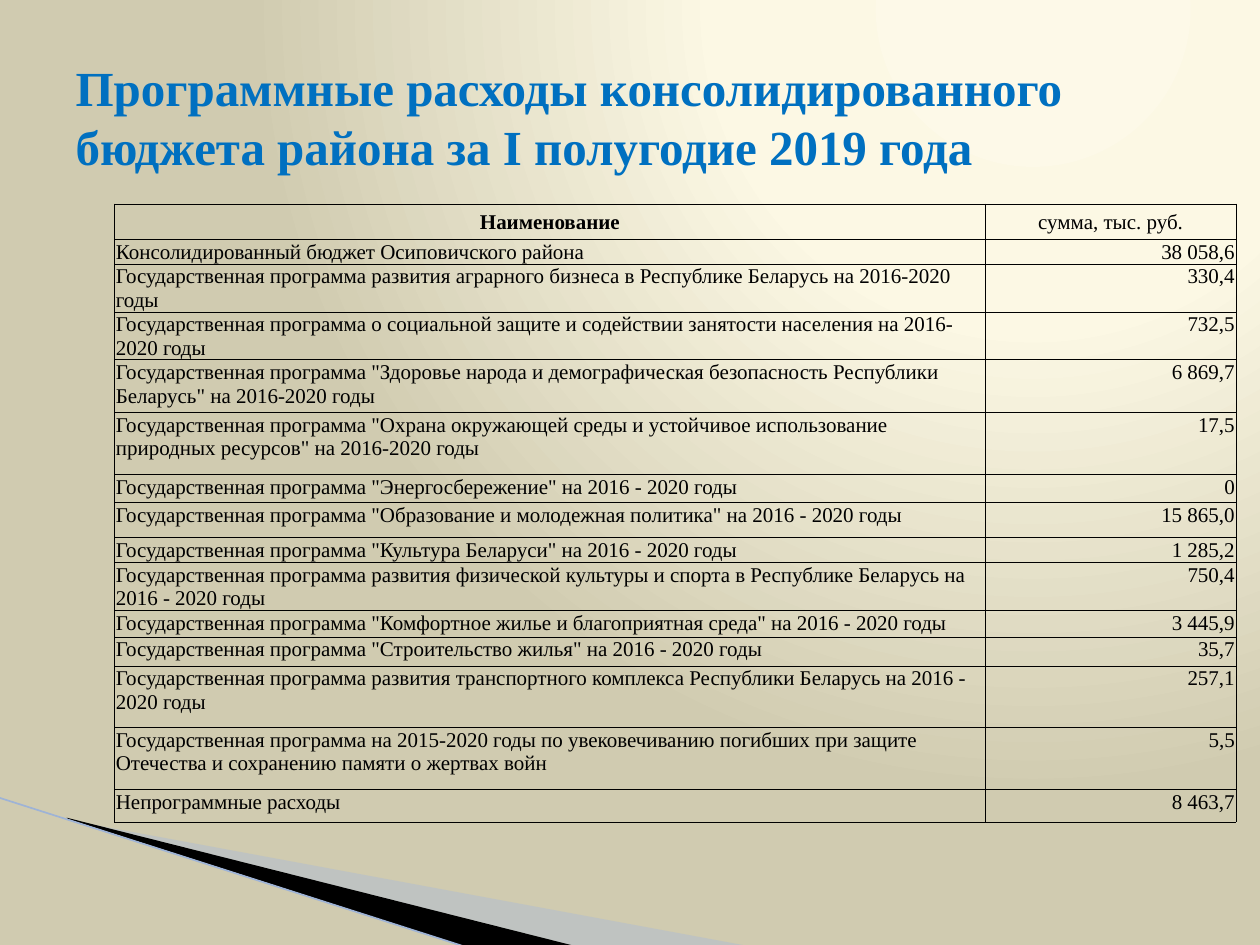
import lxml.etree
import pptx
import pptx.dml.color
import pptx.enum.shapes
import pptx.enum.text
import pptx.oxml.ns
import pptx.util

Inches = pptx.util.Inches
qn = pptx.oxml.ns.qn
ALIGN = pptx.enum.text.PP_ALIGN
ANCHOR = pptx.enum.text.MSO_ANCHOR

COLORS = {
    "glow": "FDF9E8", "cream": "FCF8E4", "sand": "D0CBB0", "mist": "A7B9DB",
    "black": "000000", "edge": "9EB3D6", "title": "0070C0",
}

TITLE = "Программные расходы консолидированного бюджета района за I полугодие 2019 года"
HEADER = ("Наименование", "сумма, тыс. руб.")
PROGRAM = "Государственная программа "
EXPENSES = [
    ("Консолидированный бюджет Осиповичского района", "38 058,6", 0.19),
    (PROGRAM + "развития аграрного бизнеса в Республике Беларусь на 2016-2020 годы", "330,4", 0.38),
    (PROGRAM + "о социальной защите и содействии занятости населения на 2016-2020 годы", "732,5", 0.36),
    (PROGRAM + '"Здоровье народа и демографическая безопасность Республики Беларусь" на 2016-2020 годы', "6 869,7", 0.42),
    (PROGRAM + '"Охрана окружающей среды и устойчивое использование природных ресурсов" на 2016-2020 годы', "17,5", 0.49),
    (PROGRAM + '"Энергосбережение" на 2016 - 2020 годы', "0", 0.22),
    (PROGRAM + '"Образование и молодежная политика" на 2016 - 2020 годы', "15 865,0", 0.28),
    (PROGRAM + '"Культура Беларуси" на 2016 - 2020 годы', "1 285,2", 0.2),
    (PROGRAM + "развития физической культуры и спорта в Республике Беларусь на 2016 - 2020 годы", "750,4", 0.38),
    (PROGRAM + '"Комфортное жилье и благоприятная среда" на 2016 - 2020 годы', "3 445,9", 0.21),
    (PROGRAM + '"Строительство жилья" на 2016 - 2020 годы', "35,7", 0.23),
    (PROGRAM + "развития транспортного комплекса Республики Беларусь на 2016 - 2020 годы", "257,1", 0.49),
    (PROGRAM + "на 2015-2020 годы по увековечиванию погибших при защите Отечества и сохранению памяти о жертвах войн", "5,5", 0.49),
    ("Непрограммные расходы", "8 463,7", 0.26),
]


class SlideBuilder:
    """Holds the style and the current slide, and adds each kind of element."""

    def __init__(self, slide, font_name):
        self.slide = slide
        self.font_name = font_name

    def color(self, name):
        return pptx.dml.color.RGBColor.from_string(COLORS[name])

    def child(self, parent, tag, **attributes):
        return lxml.etree.SubElement(parent, qn(tag), attributes)

    def background(self, stops, focus):
        self.slide.background.fill.gradient()
        gradient = next(self.slide.element.iter(qn("a:gradFill")))
        for part in list(gradient):
            gradient.remove(part)
        stop_list = self.child(gradient, "a:gsLst")
        for percent, name in stops:
            stop = self.child(stop_list, "a:gs", pos=str(percent * 1000))
            self.child(stop, "a:srgbClr", val=COLORS[name])
        circle = self.child(gradient, "a:path", path="circle")
        sides = {side: str(percent * 1000) for side, percent in zip("ltrb", focus)}
        self.child(circle, "a:fillToRect", **sides)

    def freeform(self, points, fill, opacity=100):
        corners = [(Inches(x), Inches(y)) for x, y in points]
        builder = self.slide.shapes.build_freeform(*corners[0])
        builder.add_line_segments(corners[1:], close=True)
        shape = builder.convert_to_shape()
        shape.shadow.inherit = False
        shape.fill.solid()
        shape.fill.fore_color.rgb = self.color(fill)
        shape.line.fill.background()
        if opacity < 100:
            tint = next(shape.element.spPr.iter(qn("a:srgbClr")))
            self.child(tint, "a:alpha", val=str(opacity * 1000))

    def line(self, start, end, color, width):
        ends = [Inches(value) for value in (*start, *end)]
        straight = pptx.enum.shapes.MSO_CONNECTOR.STRAIGHT
        connector = self.slide.shapes.add_connector(straight, *ends)
        connector.line.color.rgb = self.color(color)
        connector.line.width = pptx.util.Pt(width)
        self.child(connector._element.spPr, "a:effectLst")

    def set_text(self, frame, text, size, color, bold, align):
        frame.text = text
        para = frame.paragraphs[0]
        para.alignment = align
        for span in para.runs:
            span.font.name = self.font_name
            span.font.size = pptx.util.Pt(size)
            span.font.bold = bold
            span.font.color.rgb = self.color(color)

    def border(self, cell, color, width):
        properties = cell._tc.get_or_add_tcPr()
        for index, side in enumerate("LRTB"):
            edge = lxml.etree.Element(qn(f"a:ln{side}"), w=str(int(pptx.util.Pt(width))))
            fill = self.child(edge, "a:solidFill")
            self.child(fill, "a:srgbClr", val=COLORS[color])
            properties.insert(index, edge)

    def cell(self, cell, text, align, anchor, bold):
        cell.margin_left = cell.margin_right = cell.margin_top = Inches(0.01)
        cell.margin_bottom = 0
        cell.vertical_anchor = anchor
        cell.fill.background()
        self.border(cell, "black", 0.5)
        self.set_text(cell.text_frame, text, 12, "black", bold, align)

    def table(self, left, top, widths, header, header_height, rows):
        heights = [header_height] + [row[-1] for row in rows]
        frame = self.slide.shapes.add_table(
            len(heights), len(widths), Inches(left), Inches(top),
            Inches(sum(widths)), Inches(sum(heights)))
        table = frame.table
        table.first_row = table.horz_banding = False
        for column, width in zip(table.columns, widths):
            column.width = Inches(width)
        for row, height in zip(table.rows, heights):
            row.height = Inches(height)
        for index, text in enumerate(header):
            self.cell(table.cell(0, index), text, ALIGN.CENTER, ANCHOR.MIDDLE, index == 0)
        for number, (name, amount, _) in enumerate(rows, start=1):
            self.cell(table.cell(number, 0), name, ALIGN.LEFT, ANCHOR.TOP, False)
            self.cell(table.cell(number, 1), amount, ALIGN.RIGHT, ANCHOR.TOP, False)

    def title(self, text, left, top, width, height):
        box = self.slide.shapes.title
        box.left, box.top = Inches(left), Inches(top)
        box.width, box.height = Inches(width), Inches(height)
        frame = box.text_frame
        frame.word_wrap = True
        frame.auto_size = pptx.enum.text.MSO_AUTO_SIZE.NONE
        frame.vertical_anchor = ANCHOR.MIDDLE
        self.set_text(frame, text, 28, "title", True, ALIGN.LEFT)


def main():
    deck = pptx.Presentation()
    deck.slide_width, deck.slide_height = Inches(10), Inches(7.5)
    page = SlideBuilder(deck.slides.add_slide(deck.slide_layouts[5]), "Times New Roman")
    page.background([(0, "glow"), (40, "cream"), (100, "sand")], (65, 0, 0, 98))
    page.freeform([(0.55, 6.51), (5.95, 7.51), (4.56, 7.51), (0.55, 6.5)], "mist", 40)
    page.freeform([(0.53, 6.49), (4.57, 7.51), (3.72, 7.52), (0.54, 6.5)], "black")
    page.line((-0.01, 6.33), (3.71, 7.52), "edge", 0.95)
    page.table(0.91, 1.62, (6.91, 1.99), HEADER, 0.28, EXPENSES)
    page.title(TITLE, 0.5, 0.3, 9, 1.25)
    deck.save("out.pptx")


if __name__ == "__main__":
    main()
